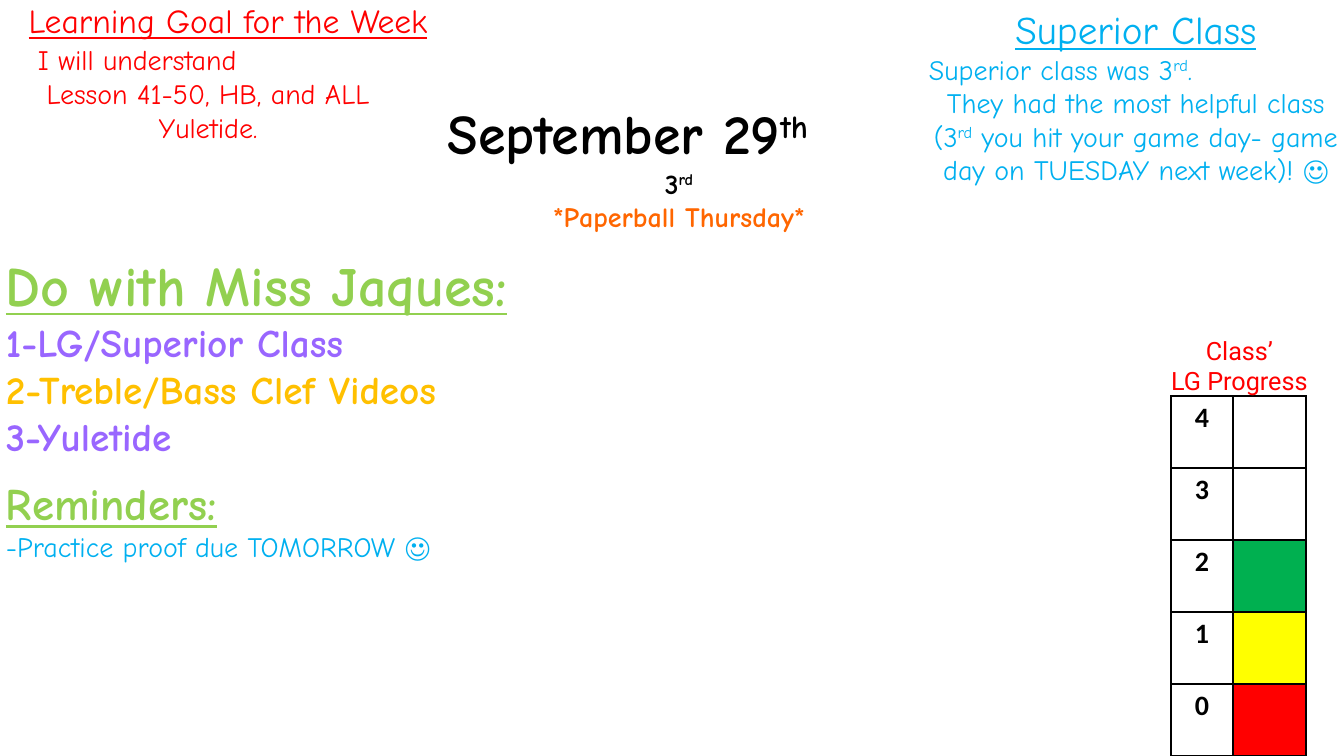
from lxml import etree
from pptx import Presentation
from pptx.dml.color import RGBColor
from pptx.enum.text import PP_ALIGN
from pptx.oxml.ns import qn
from pptx.util import Pt

EMU_PER_PX = 914400 / 100.8
LEFT, CENTER = PP_ALIGN.LEFT, PP_ALIGN.CENTER
HAND, ROBOTO, CALIBRI = "Comic Neue", "Roboto", "Calibri"

BLACK = RGBColor(0x00, 0x00, 0x00)
RED = RGBColor(0xFF, 0x00, 0x00)
ORANGE = RGBColor(0xFF, 0x66, 0x00)
LIME = RGBColor(0x92, 0xD0, 0x50)
PURPLE = RGBColor(0x99, 0x66, 0xFF)
GOLD = RGBColor(0xFF, 0xC0, 0x00)
SKY = RGBColor(0x00, 0xB0, 0xF0)
GREEN = RGBColor(0x00, 0xB0, 0x50)
YELLOW = RGBColor(0xFF, 0xFF, 0x00)

PROGRESS_LEVELS = [("4", None), ("3", None), ("2", GREEN), ("1", YELLOW), ("0", RED)]


def px(length):
    return round(length * EMU_PER_PX)


def style_run(run, size, color, font=HAND, bold=False, underline=False):
    run.font.name = font
    run.font.size = Pt(size)
    run.font.color.rgb = color
    run.font.bold = bold
    run.font.underline = underline


def line(text, size, color, align=CENTER, before=0, indent=0, right=0, **style):
    """Describe one paragraph; ^ in the text starts and ends a superscript."""
    return text, size, color, align, before, indent, right, style


def add_text(slide, left, top, width, height, lines):
    frame = slide.shapes.add_textbox(px(left), px(top), px(width), px(height)).text_frame
    frame.word_wrap = True
    for number, (text, size, color, align, before, indent, right, style) in enumerate(lines):
        paragraph = frame.add_paragraph() if number else frame.paragraphs[0]
        paragraph.alignment = align
        paragraph.space_before = Pt(before)
        margins = paragraph._p.get_or_add_pPr()
        margins.set("marL", str(px(indent)))
        margins.set("marR", str(px(right)))
        for part, words in enumerate(text.split("^")):
            if not words:
                continue
            run = paragraph.add_run()
            run.text = words
            style_run(run, size, color, **style)
            if part % 2:
                run._r.get_or_add_rPr().set("baseline", "30000")


def add_borders(cell):
    properties = cell._tc.get_or_add_tcPr()
    for side in ("lnL", "lnR", "lnT", "lnB"):
        border = etree.SubElement(properties, qn(f"a:{side}"), w=str(Pt(1)))
        fill = etree.SubElement(border, qn("a:solidFill"))
        etree.SubElement(fill, qn("a:srgbClr"), val=str(BLACK))


def add_progress_table(slide, left, top, column_widths, row_height):
    rows = len(PROGRESS_LEVELS)
    table = slide.shapes.add_table(
        rows, len(column_widths), px(left), px(top),
        px(sum(column_widths)), px(rows * row_height)).table
    table.first_row = table.horz_banding = False
    for column, width in zip(table.columns, column_widths):
        column.width = px(width)
    for row, (level, color) in enumerate(PROGRESS_LEVELS):
        table.rows[row].height = px(row_height)
        label, meter = table.cell(row, 0), table.cell(row, 1)
        for cell in (label, meter):
            add_borders(cell)
            cell.fill.background()
        if color:
            meter.fill.solid()
            meter.fill.fore_color.rgb = color
        paragraph = label.text_frame.paragraphs[0]
        paragraph.text = level
        paragraph.alignment = CENTER
        style_run(paragraph.runs[0], 20, BLACK, font=CALIBRI, bold=True)


def main():
    deck = Presentation()
    deck.slide_width, deck.slide_height = px(1344), px(756)
    slide = deck.slides.add_slide(deck.slide_layouts[6])

    add_progress_table(slide, 1171, 396, (62, 73), 72)
    add_text(slide, 1120, 330, 239, 72, [
        line("Class’", 18, RED, font=ROBOTO),
        line("LG Progress", 18, RED, font=ROBOTO),
    ])
    add_text(slide, 351, 94, 656, 146, [
        line("September 29^th^", 40, BLACK, right=102, bold=True),
        line("3^rd^", 20, BLACK, bold=True),
        line("*Paperball Thursday*", 20, ORANGE, bold=True),
    ])
    add_text(slide, -4, -5, 464, 82, [
        line("Learning Goal for the Week", 24, RED, underline=True),
    ])
    add_text(slide, -4, 246, 1171, 326, [
        line("Do with Miss Jaques:", 40, LIME, LEFT, bold=True, underline=True),
        line("1-LG/Superior Class", 28, PURPLE, LEFT, bold=True),
        line("2-Treble/Bass Clef Videos", 28, GOLD, LEFT, bold=True),
        line("3-Yuletide", 28, PURPLE, LEFT, bold=True),
        line("Reminders:", 32, LIME, LEFT, before=12, bold=True, underline=True),
        line("-Practice proof due TOMORROW ☺", 20, SKY, LEFT),
    ])
    add_text(slide, 0, 38, 416, 112, [
        line("I will understand", 20, RED, LEFT, indent=28),
        line("Lesson 41-50, HB, and ALL Yuletide.", 20, RED),
    ])
    add_text(slide, 919, 0, 434, 228, [
        line("Superior Class", 28, SKY, underline=True),
        line("Superior class was 3^rd^.", 20, SKY, LEFT),
        line("They had the most helpful class (3^rd^ you hit your game day- game day "
             "on TUESDAY next week)! ☺", 20, SKY),
    ])
    deck.save("out.pptx")


if __name__ == "__main__":
    main()
